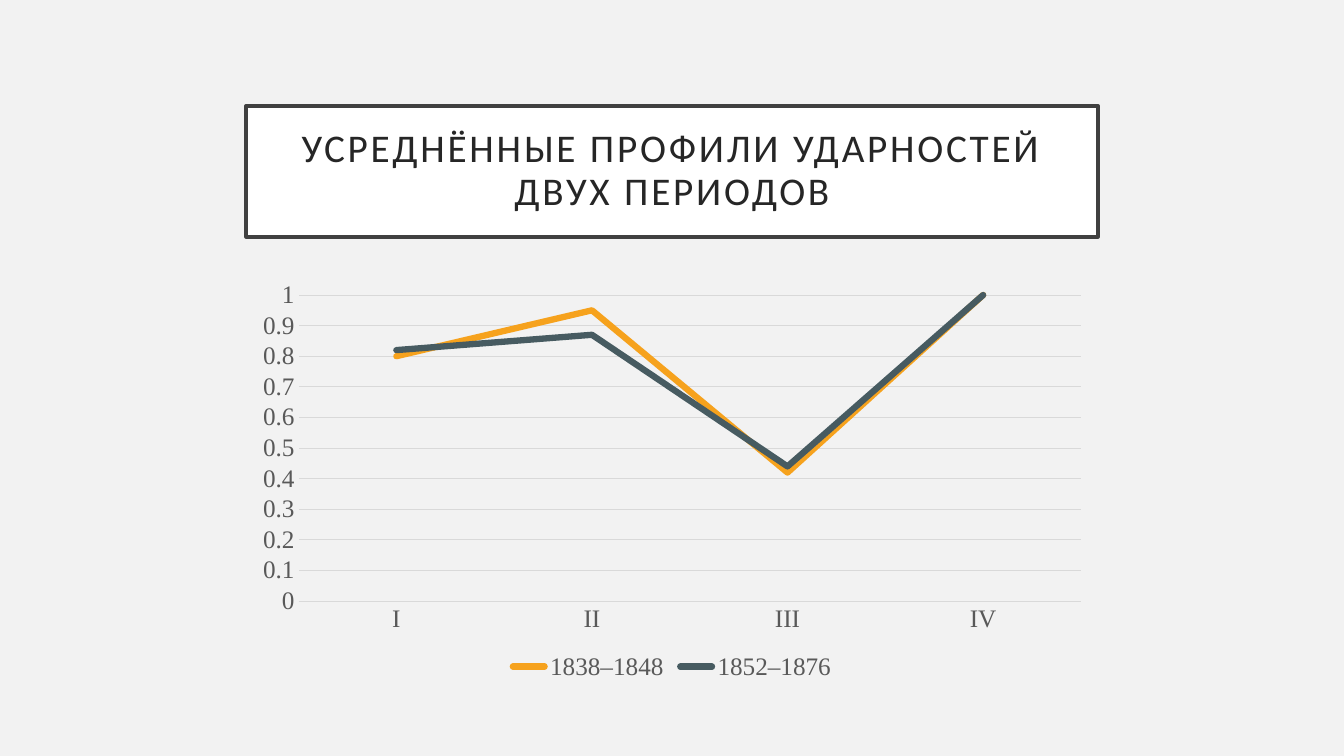
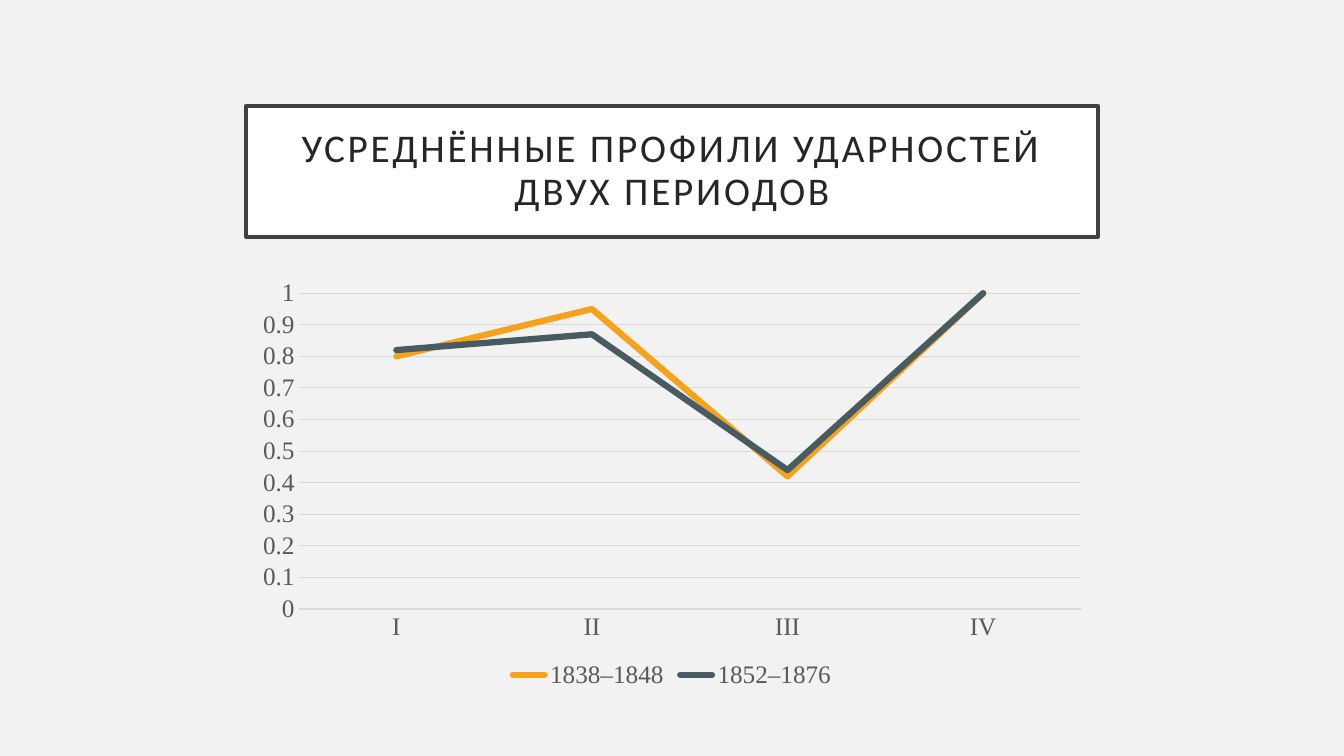
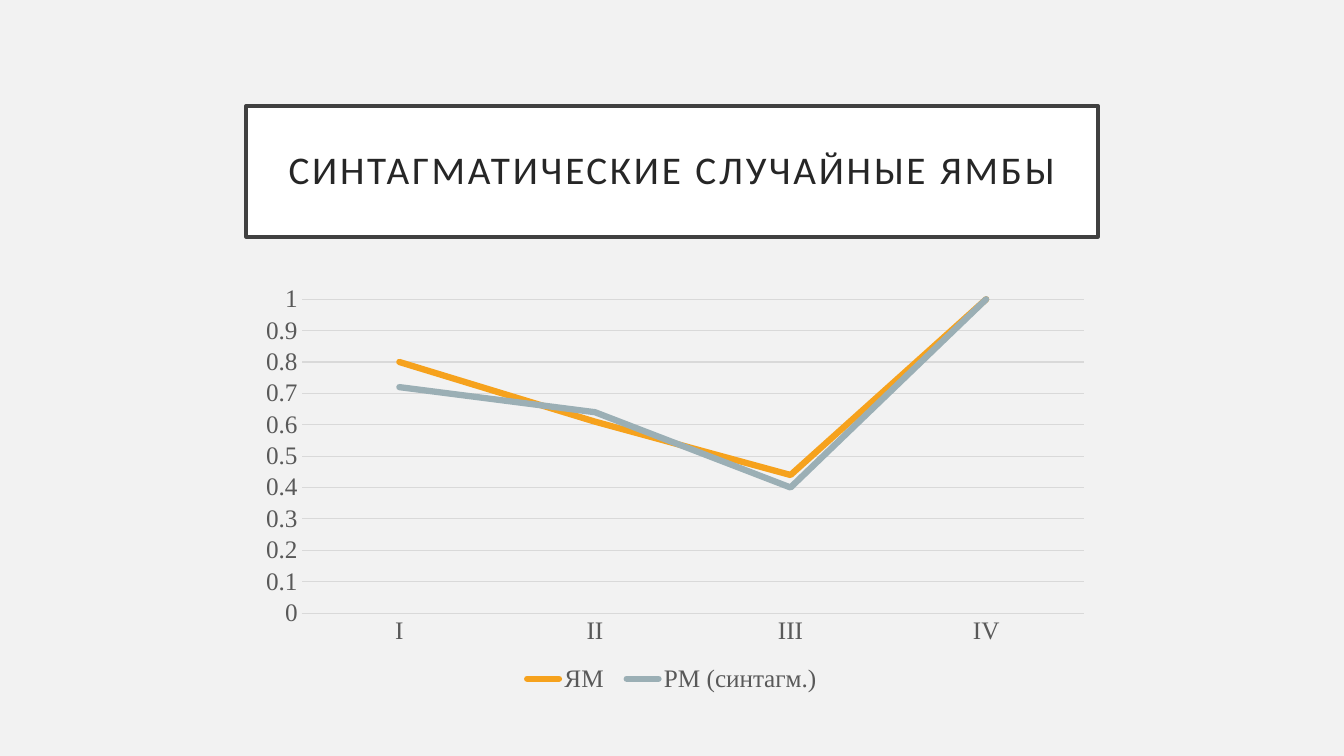
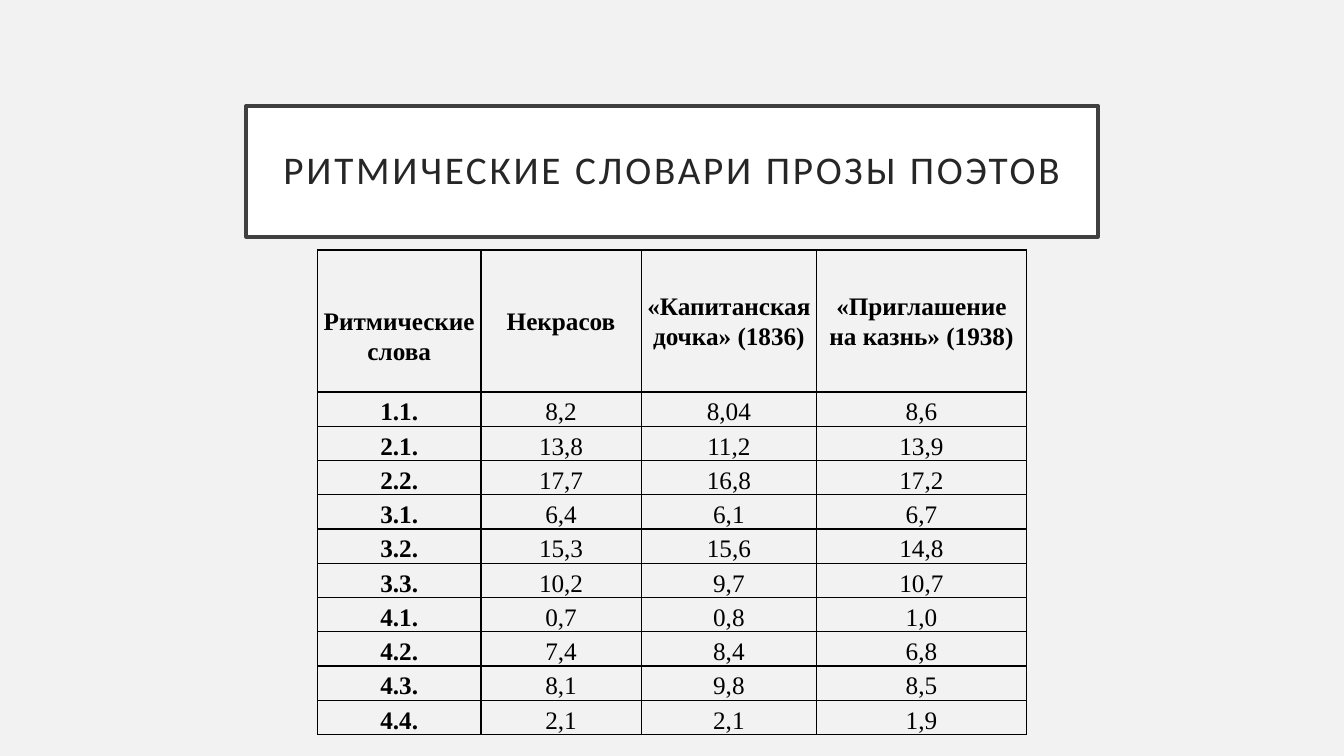
from dataclasses import dataclass

from lxml import etree
from pptx import Presentation
from pptx.chart.data import CategoryChartData
from pptx.dml.color import RGBColor
from pptx.enum.chart import XL_CHART_TYPE, XL_LEGEND_POSITION, XL_TICK_MARK
from pptx.enum.shapes import MSO_SHAPE
from pptx.enum.text import MSO_ANCHOR, PP_ALIGN
from pptx.oxml.ns import qn
from pptx.presentation import Presentation as Deck
from pptx.slide import Slide
from pptx.table import _Cell
from pptx.text.text import Font
from pptx.util import Emu, Pt

RECTANGLE = MSO_SHAPE.RECTANGLE
LINE_CHART = XL_CHART_TYPE.LINE
LEGEND_BOTTOM = XL_LEGEND_POSITION.BOTTOM
NO_TICKS = XL_TICK_MARK.NONE
CENTER = PP_ALIGN.CENTER
MIDDLE = MSO_ANCHOR.MIDDLE
BOTTOM = MSO_ANCHOR.BOTTOM

EMU_PER_PX = 9144
TITLE_FONT = "Calibri"
BODY_FONT = "Times New Roman"
BODY_SIZE = 18
COLORS = {
    "background": "F2F2F2",
    "title_fill": "FFFFFF",
    "title_border": "404040",
    "title_text": "262626",
    "axis_text": "595959",
    "grid": "D9D9D9",
    "table": "000000",
    "orange": "F6A21D",
    "slate": "475B61",
    "mist": "9BAFB5",
}


@dataclass(frozen=True)
class Box:
    left: int
    top: int
    width: int
    height: int

    def emu(self) -> tuple[Emu, Emu, Emu, Emu]:
        return px(self.left), px(self.top), px(self.width), px(self.height)


@dataclass(frozen=True)
class Profile:
    name: str
    values: tuple[float, ...]
    color: str


@dataclass(frozen=True)
class ProfileSlide:
    title: str
    chart_box: Box
    profiles: tuple[Profile, ...]


TITLE_BOX = Box(244, 105, 845, 130)
FEET = ("I", "II", "III", "IV")
PERIODS_TITLE = "УСРЕДНЁННЫЕ ПРОФИЛИ УДАРНОСТЕЙ ДВУХ ПЕРИОДОВ"
PERIODS = (
    Profile("1838–1848", (0.8, 0.95, 0.42, 1), "orange"),
    Profile("1852–1876", (0.82, 0.87, 0.44, 1), "slate"),
)
IAMBS = (
    Profile("ЯМ ", (0.8, 0.61, 0.44, 1), "orange"),
    Profile("РМ (синтагм.) ", (0.72, 0.64, 0.4, 1), "mist"),
)
PROFILE_SLIDES = (
    ProfileSlide(PERIODS_TITLE, Box(244, 271, 845, 409), PERIODS),
    ProfileSlide(PERIODS_TITLE, Box(244, 269, 845, 419), PERIODS),
    ProfileSlide("СИНТАГМАТИЧЕСКИЕ СЛУЧАЙНЫЕ ЯМБЫ", Box(247, 275, 845, 417), IAMBS),
)

DICTIONARY_TITLE = "РИТМИЧЕСКИЕ СЛОВАРИ ПРОЗЫ ПОЭТОВ"
DICTIONARY_BOX = Box(315, 248, 703, 481)
COLUMN_WIDTHS = (162, 159, 174, 208)
HEADER_HEIGHT = 141
ROW_HEIGHT = 34
CELL_MARGIN = 5
FIRST_HEADER_DROP = 30
DICTIONARY = (
    ("Ритмические слова", "Некрасов", "«Капитанская дочка» (1836)", "«Приглашение на казнь» (1938)"),
    ("1.1.", "8,2", "8,04", "8,6"),
    ("2.1.", "13,8", "11,2", "13,9"),
    ("2.2.", "17,7", "16,8", "17,2"),
    ("3.1.", "6,4", "6,1", "6,7"),
    ("3.2.", "15,3", "15,6", "14,8"),
    ("3.3.", "10,2", "9,7", "10,7"),
    ("4.1.", "0,7", "0,8", "1,0"),
    ("4.2.", "7,4", "8,4", "6,8"),
    ("4.3.", "8,1", "9,8", "8,5"),
    ("4.4.", "2,1", "2,1", "1,9"),
)


def px(length: int) -> Emu:
    return Emu(length * EMU_PER_PX)


def rgb(color: str) -> RGBColor:
    return RGBColor.from_string(COLORS[color])


def style_font(font: Font, name: str, size: int, color: str, bold: bool = False) -> None:
    font.name = name
    font.size = Pt(size)
    font.bold = bold
    font.color.rgb = rgb(color)


def add_titled_slide(deck: Deck, title: str) -> Slide:
    slide = deck.slides.add_slide(deck.slide_layouts[6])
    banner = slide.shapes.add_shape(RECTANGLE, *TITLE_BOX.emu())
    banner.shadow.inherit = False
    banner.fill.solid()
    banner.fill.fore_color.rgb = rgb("title_fill")
    banner.line.color.rgb = rgb("title_border")
    banner.line.width = Pt(2.5)
    frame = banner.text_frame
    frame.word_wrap = True
    frame.vertical_anchor = MIDDLE
    frame.margin_left = frame.margin_right = px(20)
    frame.margin_top = frame.margin_bottom = px(20)
    frame.text = title
    heading = frame.paragraphs[0]
    heading.alignment = CENTER
    heading.line_spacing = 0.9
    font = heading.runs[0].font
    style_font(font, TITLE_FONT, 28, "title_text")
    font._element.set("spc", "200")
    return slide


def add_profile_chart(slide: Slide, box: Box, profiles: tuple[Profile, ...]) -> None:
    data = CategoryChartData()
    data.categories = FEET
    for profile in profiles:
        data.add_series(profile.name, profile.values)
    chart = slide.shapes.add_chart(LINE_CHART, *box.emu(), data).chart
    chart.has_title = False
    style_font(chart.font, BODY_FONT, BODY_SIZE, "axis_text")

    chart.has_legend = True
    chart.legend.position = LEGEND_BOTTOM
    chart.legend.include_in_layout = False
    style_font(chart.legend.font, BODY_FONT, BODY_SIZE, "axis_text")

    feet_axis, stress_axis = chart.category_axis, chart.value_axis
    for axis in (feet_axis, stress_axis):
        axis.major_tick_mark = axis.minor_tick_mark = NO_TICKS
        style_font(axis.tick_labels.font, BODY_FONT, BODY_SIZE, "axis_text")
    stress_axis.minimum_scale = 0
    stress_axis.maximum_scale = 1
    stress_axis.major_unit = 0.1
    stress_axis.format.line.fill.background()
    stress_axis.has_major_gridlines = True
    for line in (feet_axis.format.line, stress_axis.major_gridlines.format.line):
        line.color.rgb = rgb("grid")
        line.width = Pt(0.75)

    plot = chart.plots[0]
    plot.vary_by_categories = False
    for series, profile in zip(plot.series, profiles):
        series.smooth = False
        series.format.line.color.rgb = rgb(profile.color)
        series.format.line.width = Pt(4.5)
        series._element.find(".//" + qn("a:ln")).set("cap", "rnd")


def add_borders(cell: _Cell) -> None:
    properties = cell._tc.get_or_add_tcPr()
    for side in ("a:lnL", "a:lnR", "a:lnT", "a:lnB"):
        border = etree.SubElement(properties, qn(side), w=str(Pt(1)))
        fill = etree.SubElement(border, qn("a:solidFill"))
        etree.SubElement(fill, qn("a:srgbClr"), val=COLORS["table"])


def fill_cell(cell: _Cell, text: str, header: bool, bold: bool) -> None:
    add_borders(cell)
    cell.fill.background()
    cell.margin_left = cell.margin_right = px(CELL_MARGIN)
    cell.margin_top = cell.margin_bottom = px(0)
    cell.vertical_anchor = MIDDLE if header else BOTTOM
    cell.text_frame.text = text
    entry = cell.text_frame.paragraphs[0]
    entry.alignment = CENTER
    entry.line_spacing = 1.07
    entry.space_after = Pt(8)
    style_font(entry.runs[0].font, BODY_FONT, BODY_SIZE, "table", bold)


def add_dictionary(slide: Slide) -> None:
    table = slide.shapes.add_table(len(DICTIONARY), len(COLUMN_WIDTHS), *DICTIONARY_BOX.emu()).table
    table.first_row = table.horz_banding = False
    for column, width in zip(table.columns, COLUMN_WIDTHS):
        column.width = px(width)
    for row_index, entries in enumerate(DICTIONARY):
        header = row_index == 0
        table.rows[row_index].height = px(HEADER_HEIGHT if header else ROW_HEIGHT)
        for column_index, text in enumerate(entries):
            fill_cell(table.cell(row_index, column_index), text, header, header or column_index == 0)
    table.cell(0, 0).margin_top = px(FIRST_HEADER_DROP)


def main() -> None:
    deck = Presentation()
    deck.slide_width, deck.slide_height = px(1333), px(750)
    background = deck.slide_master.background.fill
    background.solid()
    background.fore_color.rgb = rgb("background")
    for content in PROFILE_SLIDES:
        slide = add_titled_slide(deck, content.title)
        add_profile_chart(slide, content.chart_box, content.profiles)
    add_dictionary(add_titled_slide(deck, DICTIONARY_TITLE))
    deck.save("out.pptx")


if __name__ == "__main__":
    main()
